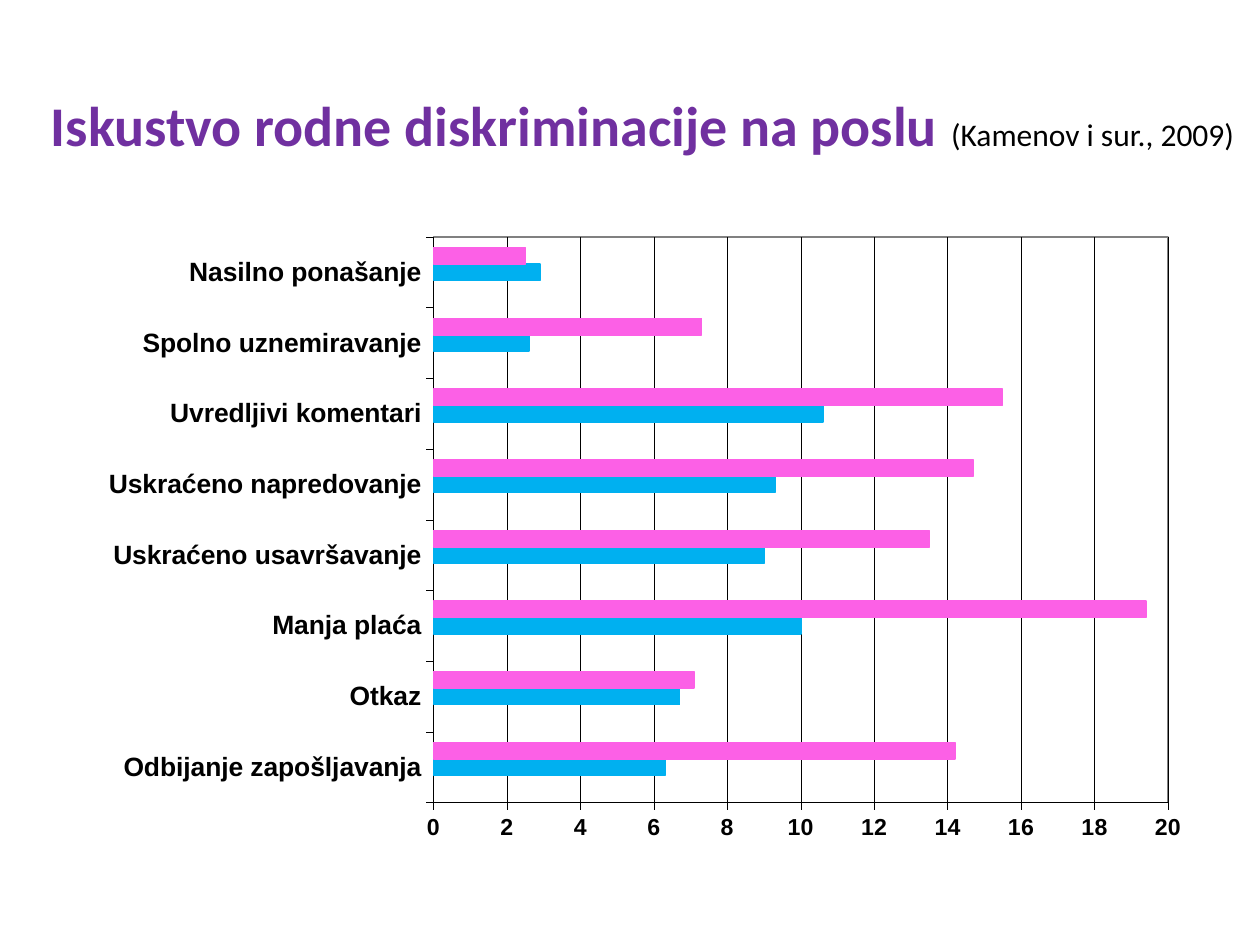
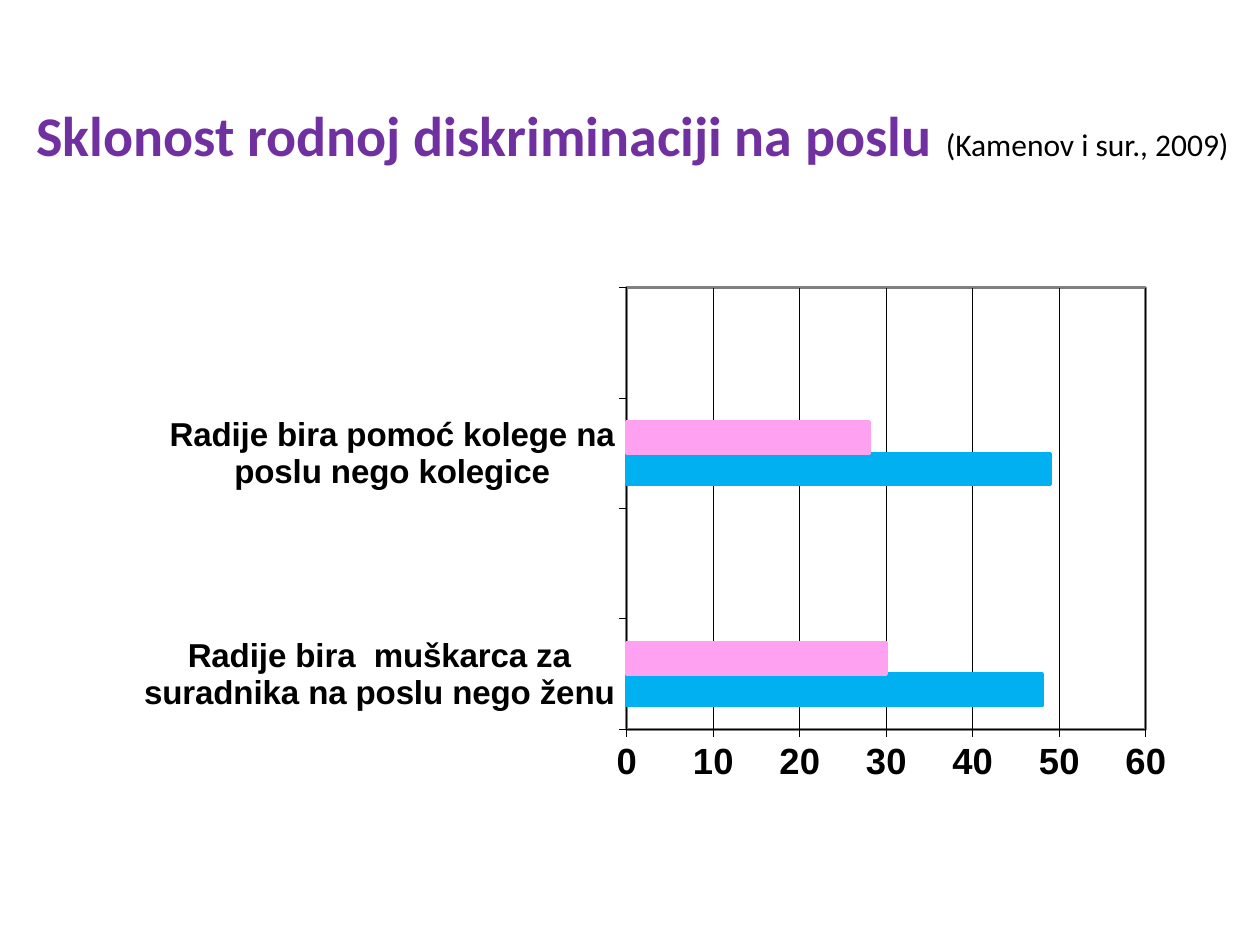
from lxml import etree
from pptx import Presentation
from pptx import util as u
from pptx.chart.data import CategoryChartData
from pptx.dml.color import RGBColor
from pptx.enum import chart as ch, text
from pptx.oxml import parse_xml
from pptx.oxml.ns import nsdecls

Pt = u.Pt
COLORS = {"title": "7030A0", "ink": "000000", "paper": "FFFFFF", "frame": "808080",
          "empty": "4F81BD", "blue": "00B0F0", "pink": "FC60E6", "light pink": "FDA1F0"}
CITATION = "(Kamenov i sur., 2009)"
TITLE_SIZE = (699.84, 90)

SLIDES = [
    {"title": "Iskustvo rodne diskriminacije na poslu ", "title_at": (17.28, 25.92),
     "chart_at": (30.96, 133.92, 660.96, 393.12),
     "plot": (0.328, 0.004, 0.635, 0.822),
     "cats": ["Odbijanje zapošljavanja", "Otkaz", "Manja plaća", "Uskraćeno usavršavanje",
              "Uskraćeno napredovanje", "Uvredljivi komentari", "Spolno uznemiravanje",
              "Nasilno ponašanje"],
     "series": [("empty", [None] * 8),
                ("blue", [6.3, 6.7, 10, 9, 9.3, 10.6, 2.6, 2.9]),
                ("pink", [14.2, 7.1, 19.4, 13.5, 14.7, 15.5, 7.3, 2.5])],
     "cat_size": 15.1, "val_size": 13.2, "top": 20, "step": 2,
     "axis_line": 0.22, "bar_line": 0.87, "gap": 130},
    {"title": "Sklonost rodnoj diskriminaciji na poslu ", "title_at": (11.52, 31.68),
     "chart_at": (59.76, 145.44, 635.04, 370.08),
     "plot": (0.47, 0.051, 0.467, 0.682),
     "cats": ["Radije bira  muškarca za suradnika na poslu nego ženu", "",
              "Radije bira pomoć kolege na poslu nego kolegice", ""],
     "series": [("blue", [48, None, 49, None]),
                ("light pink", [30, None, 28, None])],
     "cat_size": 18.9, "val_size": 20.8, "top": 60, "step": 10,
     "axis_line": 0.46, "bar_line": 1.85, "gap": 150},
]


def rgb(name):
    return RGBColor.from_string(COLORS[name])


def set_font(font, color, **values):
    for name, value in values.items():
        setattr(font, name, value)
    font.color.rgb = rgb(color)


def set_line(line, color, width):
    line.color.rgb = rgb(color)
    line.width = Pt(width)


def add_title(slide, item):
    title = slide.shapes.title
    title.left, title.top, title.width, title.height = map(Pt, item["title_at"] + TITLE_SIZE)
    tf = title.text_frame
    tf.auto_size = text.MSO_AUTO_SIZE.NONE
    tf.vertical_anchor = text.MSO_ANCHOR.MIDDLE
    p = tf.paragraphs[0]
    p.alignment = text.PP_ALIGN.CENTER
    for words, size, color, bold in ((item["title"], 32, "title", True),
                                     (CITATION, 18, "ink", False)):
        r = p.add_run()
        r.text = words
        set_font(r.font, color, name="Calibri", size=Pt(size), bold=bold)


def format_plot_area(chart, item):
    """Fix the inner plot rectangle and give it a white fill and a grey frame."""
    area = chart._chartSpace.chart.plotArea
    for old in area.xpath("c:layout"):
        area.remove(old)
    layout = parse_xml(f"<c:layout {nsdecls('c')}><c:manualLayout/></c:layout>")
    settings = [("layoutTarget", "inner"), ("xMode", "edge"), ("yMode", "edge"),
                *zip("xywh", item["plot"])]
    for tag, value in settings:
        child = etree.SubElement(layout[0], layout.tag.replace("layout", tag))
        child.set("val", str(value))
    area.insert(0, layout)
    area.append(parse_xml(
        f'<c:spPr {nsdecls("c", "a")}>'
        f'<a:solidFill><a:srgbClr val="{COLORS["paper"]}"/></a:solidFill>'
        f'<a:ln w="{Pt(item["bar_line"])}"><a:solidFill>'
        f'<a:srgbClr val="{COLORS["frame"]}"/></a:solidFill></a:ln></c:spPr>'))


def add_bars(slide, item):
    data = CategoryChartData()
    data.categories = item["cats"]
    for number, (_, values) in enumerate(item["series"], 1):
        data.add_series(f"Series {number}", values)
    chart = slide.shapes.add_chart(ch.XL_CHART_TYPE.BAR_CLUSTERED,
                                   *map(Pt, item["chart_at"]), data).chart
    chart.has_title = chart.has_legend = False
    set_font(chart.font, "ink", name="Arial", bold=True, size=Pt(item["val_size"]))

    plot = chart.plots[0]
    plot.gap_width, plot.overlap, plot.vary_by_categories = item["gap"], 0, False
    for series, (color, _) in zip(plot.series, item["series"]):
        series.format.fill.solid()
        series.format.fill.fore_color.rgb = rgb(color)
        set_line(series.format.line, color, item["bar_line"])

    for axis, size in ((chart.category_axis, item["cat_size"]),
                       (chart.value_axis, item["val_size"])):
        axis.major_tick_mark = ch.XL_TICK_MARK.OUTSIDE
        axis.minor_tick_mark = ch.XL_TICK_MARK.NONE
        set_font(axis.tick_labels.font, "ink", name="Arial", bold=True, size=Pt(size))
        set_line(axis.format.line, "ink", item["axis_line"])
    scale = chart.value_axis
    scale.minimum_scale, scale.maximum_scale, scale.major_unit = 0, item["top"], item["step"]
    scale.has_major_gridlines = True
    set_line(scale.major_gridlines.format.line, "ink", item["axis_line"])
    format_plot_area(chart, item)


def main():
    prs = Presentation()
    prs.slide_width, prs.slide_height = Pt(720), Pt(540)
    for item in SLIDES:
        slide = prs.slides.add_slide(prs.slide_layouts[5])
        add_title(slide, item)
        add_bars(slide, item)
    prs.save("out.pptx")


if __name__ == "__main__":
    main()
